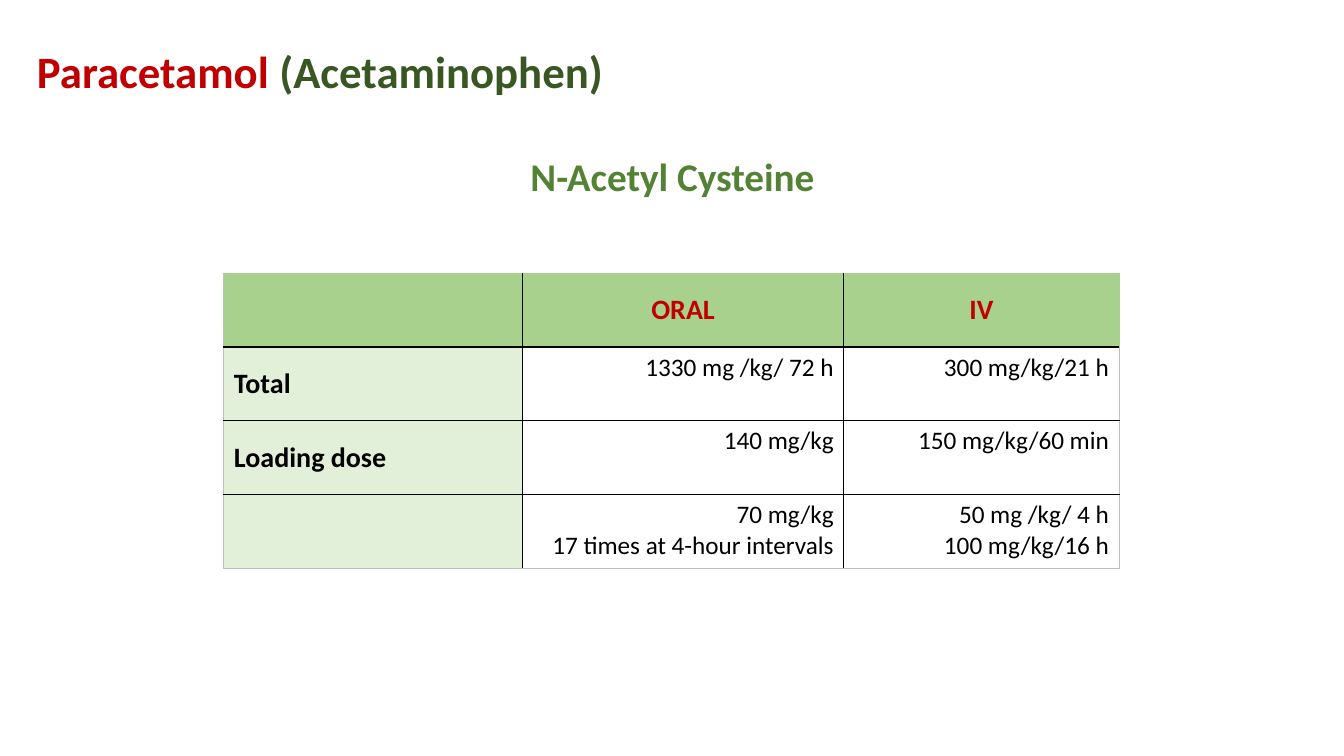
import pptx
import pptx.util
import pptx.dml.color
import pptx.enum.text
import pptx.oxml
import pptx.oxml.ns

Inches = pptx.util.Inches
RGBColor = pptx.dml.color.RGBColor
ALIGN = pptx.enum.text.PP_ALIGN
ANCHOR = pptx.enum.text.MSO_ANCHOR

RED = RGBColor(0xC0, 0x00, 0x00)
DARK = RGBColor(0x38, 0x57, 0x23)
GREEN = RGBColor(0x54, 0x82, 0x35)
HEAD = RGBColor(0xA9, 0xD1, 0x8E)
SIDE = RGBColor(0xE2, 0xF0, 0xD9)
BLACK = RGBColor(0x00, 0x00, 0x00)
GREY = RGBColor(0xBF, 0xBF, 0xBF)


def style(run, size, color, bold=True):
    run.font.name = "Calibri"
    run.font.size = pptx.util.Pt(size)
    run.font.bold = bold
    run.font.color.rgb = color


def border(cell, side, color):
    cell._tc.get_or_add_tcPr().append(pptx.oxml.parse_xml(
        f'<a:ln{side} {pptx.oxml.ns.nsdecls("a")} w="12700"><a:solidFill>'
        f'<a:srgbClr val="{color}"/></a:solidFill></a:ln{side}>'))


deck = pptx.Presentation()
deck.slide_width = Inches(13.33)
deck.slide_height = Inches(7.5)
slide = deck.slides.add_slide(deck.slide_layouts[5])

# Title
title = slide.shapes.title
title.left, title.top = Inches(4.38), Inches(1.27)
title.width, title.height = Inches(4.58), Inches(1.01)
title.text_frame.text = "N-Acetyl Cysteine"
title.text_frame.vertical_anchor = ANCHOR.MIDDLE
para = title.text_frame.paragraphs[0]
para.alignment = ALIGN.CENTER
para.line_spacing = 0.9
style(para.runs[0], 28, GREEN)

# Dose table
doses = [
    ["", "ORAL", "IV"],
    ["Total", "1330 mg /kg/ 72 h", "300 mg/kg/21 h"],
    ["Loading dose", "140 mg/kg", "150 mg/kg/60 min"],
    ["", "70 mg/kg\n17 times at 4-hour intervals",
     "50 mg /kg/ 4 h\n100 mg/kg/16 h"],
]
widths = [2.96, 3.19, 2.73]
last_row, last_col = len(doses) - 1, len(widths) - 1
table = slide.shapes.add_table(
    len(doses), len(widths), Inches(2.22), Inches(2.71),
    Inches(sum(widths)), Inches(2.93)).table
table.first_row = table.horz_banding = False
for col, width in zip(table.columns, widths):
    col.width = Inches(width)

for r, row in enumerate(doses):
    for c, text in enumerate(row):
        cell = table.cell(r, c)
        edges = {"L": c == 0, "R": c == last_col,
                 "T": r == 0, "B": r == last_row}
        for side, outer in edges.items():
            tint = HEAD if r == 0 and side != "L" else GREY
            border(cell, side, tint if outer else BLACK)
        label = r == 0 or c == 0
        if label:
            cell.fill.solid()
            cell.fill.fore_color.rgb = HEAD if r == 0 else SIDE
        else:
            cell.fill.background()
        cell.vertical_anchor = ANCHOR.MIDDLE if label else ANCHOR.TOP
        cell.text_frame.text = text
        for para in cell.text_frame.paragraphs:
            para.alignment = (ALIGN.CENTER if r == 0 else
                              ALIGN.LEFT if c == 0 else ALIGN.RIGHT)
            for run in para.runs:
                style(run, 20 if label else 18, RED if r == 0 else BLACK, label)

# Drug name
box = slide.shapes.add_textbox(
    Inches(0.25), Inches(0.38), Inches(5.85), Inches(0.64))
box.text_frame.word_wrap = True
box.text_frame.auto_size = pptx.enum.text.MSO_AUTO_SIZE.SHAPE_TO_FIT_TEXT
para = box.text_frame.paragraphs[0]
para.alignment = ALIGN.CENTER
for text, color in [("Paracetamol ", RED), ("(Acetaminophen)", DARK)]:
    run = para.add_run()
    run.text = text
    style(run, 32, color)

deck.save("out.pptx")
